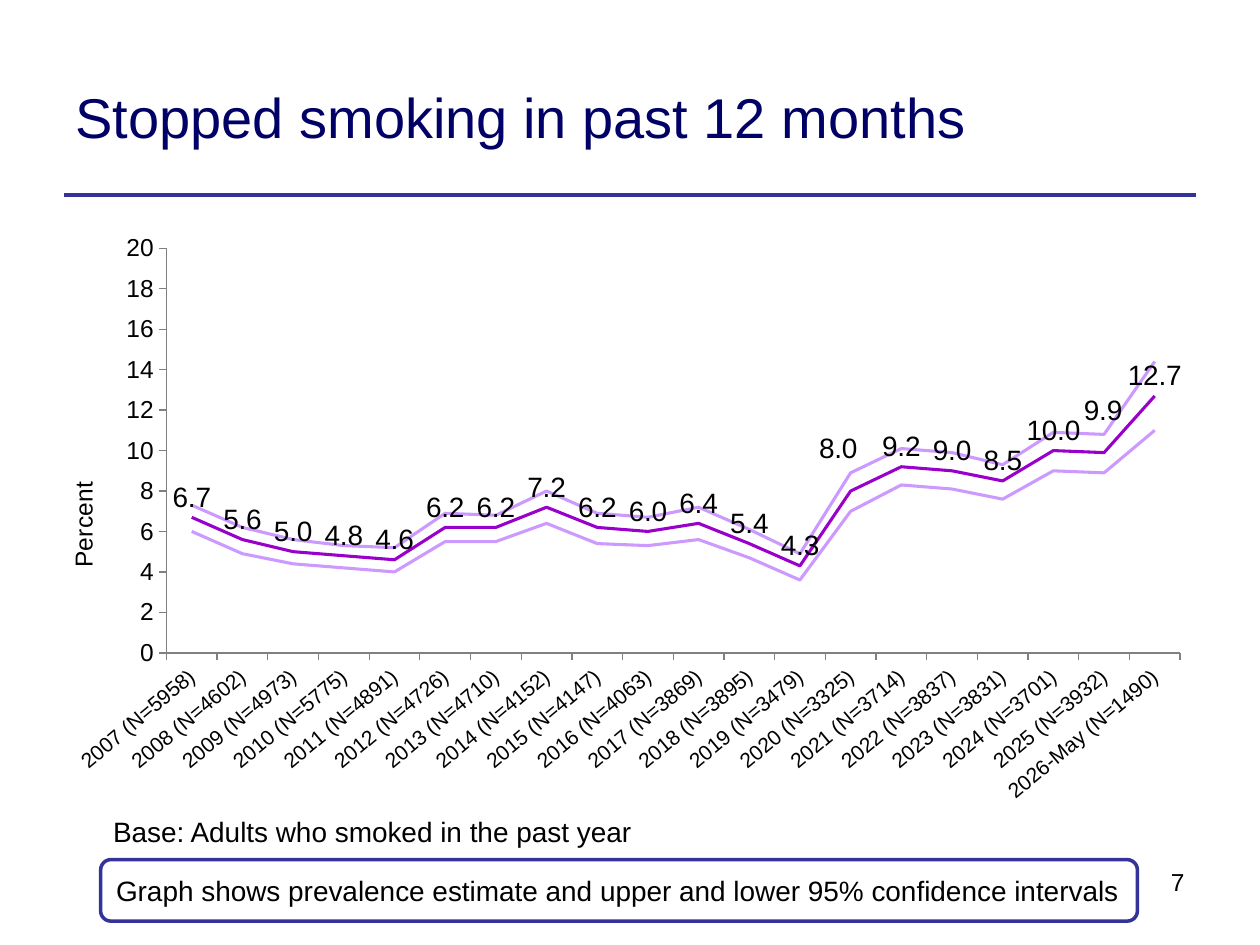
from lxml.etree import SubElement
from pptx import Presentation
from pptx.chart.data import CategoryChartData
from pptx.dml.color import RGBColor
from pptx.enum.chart import XL_CHART_TYPE, XL_LABEL_POSITION, XL_TICK_MARK
from pptx.enum.shapes import MSO_CONNECTOR, MSO_SHAPE
from pptx.enum.text import MSO_ANCHOR, PP_ALIGN
from pptx.oxml import parse_xml
from pptx.oxml.ns import nsdecls, qn
from pptx.util import Cm, Pt

FONT = "Arial"
BLACK = RGBColor(0x00, 0x00, 0x00)
WHITE = RGBColor(0xFF, 0xFF, 0xFF)
NAVY = RGBColor(0x00, 0x00, 0x66)
INDIGO = RGBColor(0x33, 0x33, 0x99)
PURPLE = RGBColor(0x99, 0x00, 0xCC)
LILAC = RGBColor(0xCC, 0x99, 0xFF)
GRAY = RGBColor(0x80, 0x80, 0x80)

LABEL_FORMAT = "#,##0.0"
NO_LEADERS = (
    f'<c:extLst {nsdecls("c")}><c:ext uri="{{CE6537A1-D6FC-4f65-9D91-7224C49458BB}}" '
    'xmlns:c15="http://schemas.microsoft.com/office/drawing/2012/chart">'
    '<c15:showLeaderLines val="0"/></c:ext></c:extLst>')
SAMPLE_SIZES = [5958, 4602, 4973, 5775, 4891, 4726, 4710, 4152, 4147, 4063,
                3869, 3895, 3479, 3325, 3714, 3837, 3831, 3701, 3932, 1490]
ESTIMATE = [6.7, 5.6, 5, 4.8, 4.6, 6.2, 6.2, 7.2, 6.2, 6,
            6.4, 5.4, 4.3, 8, 9.2, 9, 8.5, 10, 9.9, 12.7]
LOWER = [6, 4.9, 4.4, 4.2, 4, 5.5, 5.5, 6.4, 5.4, 5.3,
         5.6, 4.7, 3.6, 7, 8.3, 8.1, 7.6, 9, 8.9, 11]
UPPER = [7.3, 6.2, 5.6, 5.3, 5.2, 6.9, 6.8, 8, 6.9, 6.7,
         7.2, 6.1, 4.9, 8.9, 10.1, 9.9, 9.3, 10.9, 10.8, 14.4]
SERIES = [("Series 1", ESTIMATE, PURPLE), ("Series 2", LOWER, LILAC),
          ("Series 3", UPPER, LILAC)]
MOVED_LABELS = {13: {"x": -1.1, "y": -3.8}, 18: {"x": -0.1, "y": -3.8}}


def write_text(shape, text, size=16, color=BLACK, align=PP_ALIGN.LEFT,
               anchor=MSO_ANCHOR.TOP, wrap=True):
    """Put one formatted paragraph into a shape."""
    frame = shape.text_frame
    frame.word_wrap = wrap
    frame.vertical_anchor = anchor
    para = frame.paragraphs[0]
    para.alignment = align
    span = para.add_run()
    span.text = text
    span.font.name = FONT
    span.font.size = Pt(size)
    span.font.color.rgb = color


def format_font(font, size):
    """Give chart text the common font."""
    font.name = FONT
    font.size = Pt(size)
    font.bold = False
    font.color.rgb = BLACK


def make_layout(modes=None, **percents):
    """Return a manual chart layout with lengths in percent of the chart."""
    layout = parse_xml(f'<c:layout {nsdecls("c")}><c:manualLayout/></c:layout>')
    lengths = {name: f"{percent / 100:.3f}" for name, percent in percents.items()}
    for name, value in {**(modes or {}), **lengths}.items():
        SubElement(layout[0], qn(f"c:{name}")).set("val", value)
    return layout


def drop_layout(element):
    """Remove any layout an element already has."""
    for old in element.findall(qn("c:layout")):
        element.remove(old)


def add_header(slide, left, top, width, height):
    """Place the title above a full-width rule."""
    box = slide.shapes.add_textbox(Cm(left), Cm(top), Cm(width - 2.82), Cm(height))
    write_text(box, "Stopped smoking in past 12 months", size=32, color=NAVY,
               anchor=MSO_ANCHOR.MIDDLE)
    rule = slide.shapes.add_connector(
        MSO_CONNECTOR.STRAIGHT, Cm(left + 0.03), Cm(top + height),
        Cm(left + width - 0.03), Cm(top + height))
    rule.line.color.rgb = INDIGO
    rule.line.width = Pt(2.25)
    SubElement(rule._element.spPr, qn("a:effectLst"))


def format_axis(axis, size):
    """Style one chart axis."""
    axis.has_major_gridlines = False
    axis.major_tick_mark = XL_TICK_MARK.OUTSIDE
    axis.minor_tick_mark = XL_TICK_MARK.NONE
    axis.format.line.color.rgb = GRAY
    format_font(axis.tick_labels.font, size)


def move_label(series, index, shift):
    """Shift the data label of one point."""
    label = series.points[index].data_label
    format_font(label.font, 16)
    label.position = XL_LABEL_POSITION.ABOVE
    mark = series._element.xpath(f"c:dLbls/c:dLbl/c:idx[@val='{index}']")[0]
    layout = make_layout(**shift)
    mark.addnext(layout)
    layout.addnext(parse_xml(
        f'<c:numFmt {nsdecls("c")} formatCode="{LABEL_FORMAT}" sourceLinked="0"/>'))


def label_estimate(series):
    """Show the values of a series above its line, without leader lines."""
    labels = series.data_labels
    labels.show_value = True
    labels.position = XL_LABEL_POSITION.ABOVE
    labels.number_format = LABEL_FORMAT
    labels.number_format_is_linked = False
    format_font(labels.font, 16)
    for index, shift in MOVED_LABELS.items():
        move_label(series, index, shift)
    for leader in labels._element.findall(qn("c:showLeaderLines")):
        leader.set("val", "0")
    labels._element.append(parse_xml(NO_LEADERS))


def add_trend_chart(slide, left, top, width, height):
    """Place the line chart of the estimate and its interval."""
    data = CategoryChartData(number_format="General")
    years = [str(year) for year in range(2007, 2026)] + ["2026-May"]
    data.categories = [f"{year} (N={size})" for year, size in zip(years, SAMPLE_SIZES)]
    for name, values, _ in SERIES:
        data.add_series(name, values)
    chart = slide.shapes.add_chart(XL_CHART_TYPE.LINE, Cm(left), Cm(top), Cm(width),
                                   Cm(height), data).chart
    chart.has_legend = False
    chart.has_title = False
    format_font(chart.font, 18)

    format_axis(chart.category_axis, 12)
    chart.category_axis._element.find(qn("c:txPr")).find(qn("a:bodyPr")).set("rot", "-2400000")
    axis = chart.value_axis
    format_axis(axis, 14)
    axis.minimum_scale, axis.maximum_scale, axis.major_unit = 0, 20, 2
    title = axis.axis_title
    title.text_frame.text = "Percent "
    format_font(title.text_frame.paragraphs[0].runs[0].font, 14)
    title.text_frame._txBody.find(qn("a:bodyPr")).set("rot", "-5400000")
    edges = {"xMode": "edge", "yMode": "edge"}
    drop_layout(title._element)
    title._element.find(qn("c:tx")).addnext(make_layout(edges, x=0, y=42.5))

    plot = chart.plots[0]
    plot.vary_by_categories = False
    for series, (_, _, color) in zip(plot.series, SERIES):
        series.smooth = False
        series.format.line.color.rgb = color
        series.format.line.width = Pt(1.75)
    label_estimate(plot.series[0])

    area = chart._chartSpace.chart.plotArea
    drop_layout(area)
    area.insert(0, make_layout({"layoutTarget": "inner", **edges},
                               x=9.1, y=4.7, w=89.2, h=68.9))


def add_footer(slide, left, top, width, height):
    """Place the page number, the framed note and the base line."""
    number = slide.shapes.add_textbox(Cm(left + width - 7.04), Cm(top + 1.07),
                                      Cm(7.04), Cm(height - 1.07))
    write_text(number, "7", size=14, align=PP_ALIGN.RIGHT)
    note = slide.shapes.add_shape(MSO_SHAPE.ROUNDED_RECTANGLE, Cm(left), Cm(top + 1.04),
                                  Cm(width - 1.2), Cm(1.24))
    note.shadow.inherit = False
    note.fill.solid()
    note.fill.fore_color.rgb = WHITE
    note.line.color.rgb = INDIGO
    note.line.width = Pt(2)
    write_text(note, "Graph shows prevalence estimate and upper and lower 95% "
               "confidence intervals", anchor=MSO_ANCHOR.MIDDLE)
    base = slide.shapes.add_textbox(Cm(left), Cm(top), Cm(11.1), Cm(0.94))
    write_text(base, "Base: Adults who smoked in the past year", wrap=False)


def main():
    """Build the deck and save it."""
    deck = Presentation()
    deck.slide_width, deck.slide_height = Cm(25.4), Cm(19.05)
    slide = deck.slides.add_slide(deck.slide_layouts[6])
    add_header(slide, 1.27, 0.76, 22.86, 3.18)
    add_trend_chart(slide, 1.27, 4.45, 22.91, 11.84)
    add_footer(slide, 2.03, 16.29, 22.1, 2.38)
    deck.save("out.pptx")


if __name__ == "__main__":
    main()
